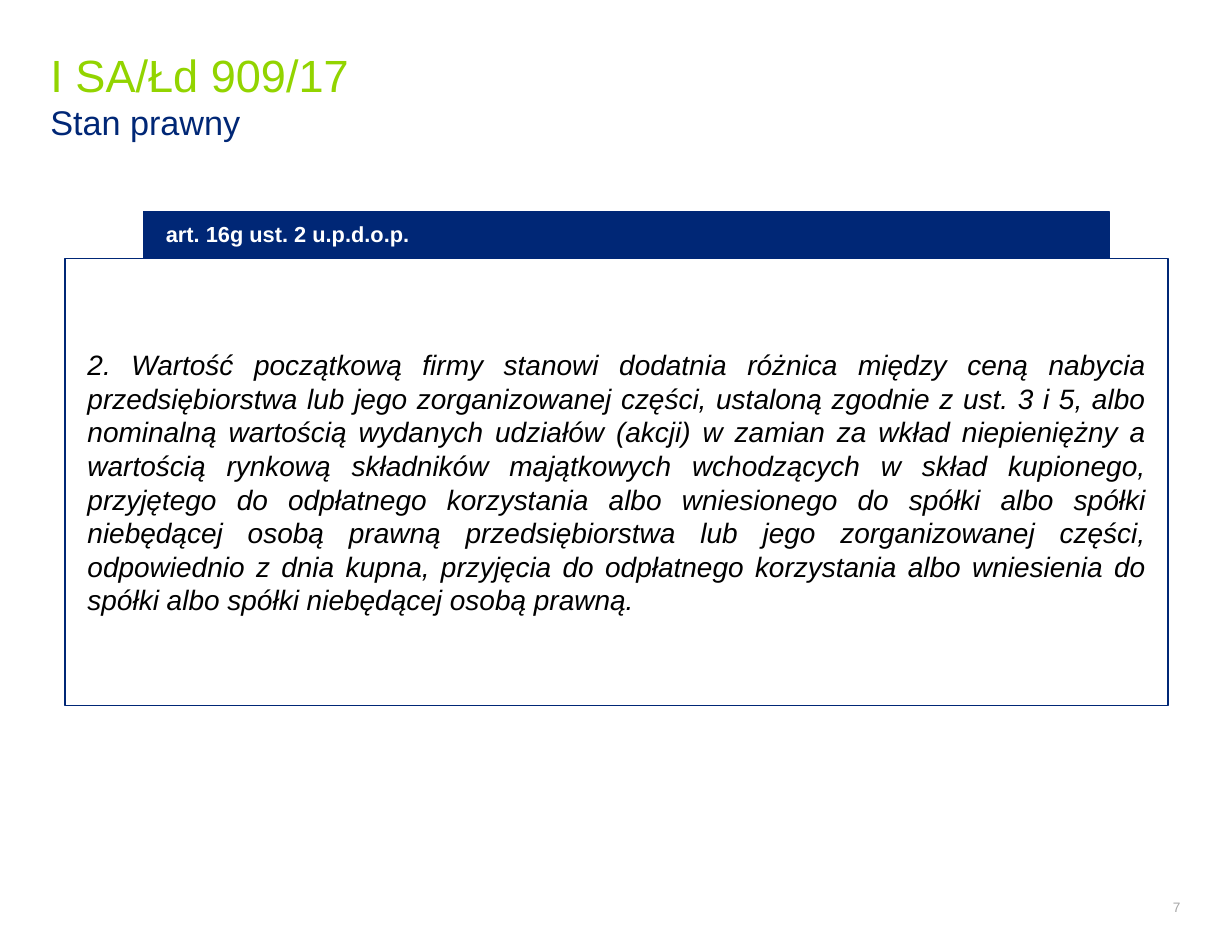
from dataclasses import dataclass
from typing import Optional

import pptx
import pptx.dml.color
import pptx.enum.shapes
import pptx.enum.text
import pptx.util

Pt = pptx.util.Pt
ALIGN = pptx.enum.text.PP_ALIGN
COLORS = {
    "green": "92D400",
    "navy": "002776",
    "white": "FFFFFF",
    "black": "000000",
    "grey": "A6A6A6",
}
ARTICLE = (
    "2. Wartość początkową firmy stanowi dodatnia różnica między ceną nabycia "
    "przedsiębiorstwa lub jego zorganizowanej części, ustaloną zgodnie z ust. 3 i 5, "
    "albo nominalną wartością wydanych udziałów (akcji) w zamian za wkład niepieniężny "
    "a wartością rynkową składników majątkowych wchodzących w skład kupionego, "
    "przyjętego do odpłatnego korzystania albo wniesionego do spółki albo spółki "
    "niebędącej osobą prawną przedsiębiorstwa lub jego zorganizowanej części, "
    "odpowiednio z dnia kupna, przyjęcia do odpłatnego korzystania albo wniesienia do "
    "spółki albo spółki niebędącej osobą prawną."
)


@dataclass
class Line:
    text: str
    size: float
    color: str


@dataclass
class Block:
    left: float
    top: float
    width: float
    height: float
    lines: list[Line]
    align: ALIGN = ALIGN.LEFT
    inset: float = 0
    bold: bool = False
    italic: bool = False
    boxed: bool = False
    fill: Optional[str] = None
    spacing: Optional[float] = None
    after: float = 0


def rgb(name: str) -> pptx.dml.color.RGBColor:
    return pptx.dml.color.RGBColor.from_string(COLORS[name])


def write_text(tf: pptx.text.text.TextFrame, block: Block) -> None:
    tf.word_wrap = True
    tf.vertical_anchor = pptx.enum.text.MSO_ANCHOR.MIDDLE
    tf.margin_left = tf.margin_right = Pt(block.inset)
    tf.margin_top = tf.margin_bottom = Pt(block.inset)
    p = tf.paragraphs[0]
    p.alignment = block.align
    p.space_after = Pt(block.after)
    if block.spacing:
        p.line_spacing = Pt(block.spacing)
    p.font.name = "Arial"
    p.font.bold = block.bold
    p.font.italic = block.italic
    for i, line in enumerate(block.lines):
        if i:
            p.add_line_break()
        r = p.add_run()
        r.text = line.text
        r.font.name = "Arial"
        r.font.bold = block.bold
        r.font.italic = block.italic
        r.font.size = Pt(line.size)
        r.font.color.rgb = rgb(line.color)


def draw_block(s: pptx.slide.Slide, block: Block) -> None:
    frame = [Pt(v) for v in (block.left, block.top, block.width, block.height)]
    if block.boxed:
        sp = s.shapes.add_shape(pptx.enum.shapes.MSO_SHAPE.RECTANGLE, *frame)
        sp.shadow.inherit = False
        sp.line.color.rgb = rgb("navy")
        sp.line.width = Pt(1)
        if block.fill:
            sp.fill.solid()
            sp.fill.fore_color.rgb = rgb(block.fill)
        else:
            sp.fill.background()
    else:
        sp = s.shapes.add_textbox(*frame)
    write_text(sp.text_frame, block)


def main() -> None:
    title = Block(32.4, 22.3, 726.5, 77, [
        Line("I SA/Łd 909/17", 29, "green"),
        Line("Stan prawny", 22, "navy"),
    ])
    number = Block(690.5, 571.7, 68.4, 22.3, [Line("7", 8.8, "grey")], ALIGN.RIGHT)
    header = Block(92.2, 136.1, 620.6, 30.2,
                   [Line("art. 16g ust. 2 u.p.d.o.p.", 14, "white")],
                   inset=14.4, bold=True, boxed=True, fill="navy",
                   spacing=15, after=6)
    body = Block(41.8, 166.3, 709.2, 287.3, [Line(ARTICLE, 18, "black")],
                 ALIGN.JUSTIFY, inset=14.4, italic=True, boxed=True)

    prs = pptx.Presentation()
    prs.slide_width = Pt(792)
    prs.slide_height = Pt(612)
    s = prs.slides.add_slide(prs.slide_layouts[6])
    for block in (title, number, header, body):
        draw_block(s, block)
    prs.save("out.pptx")


if __name__ == "__main__":
    main()
